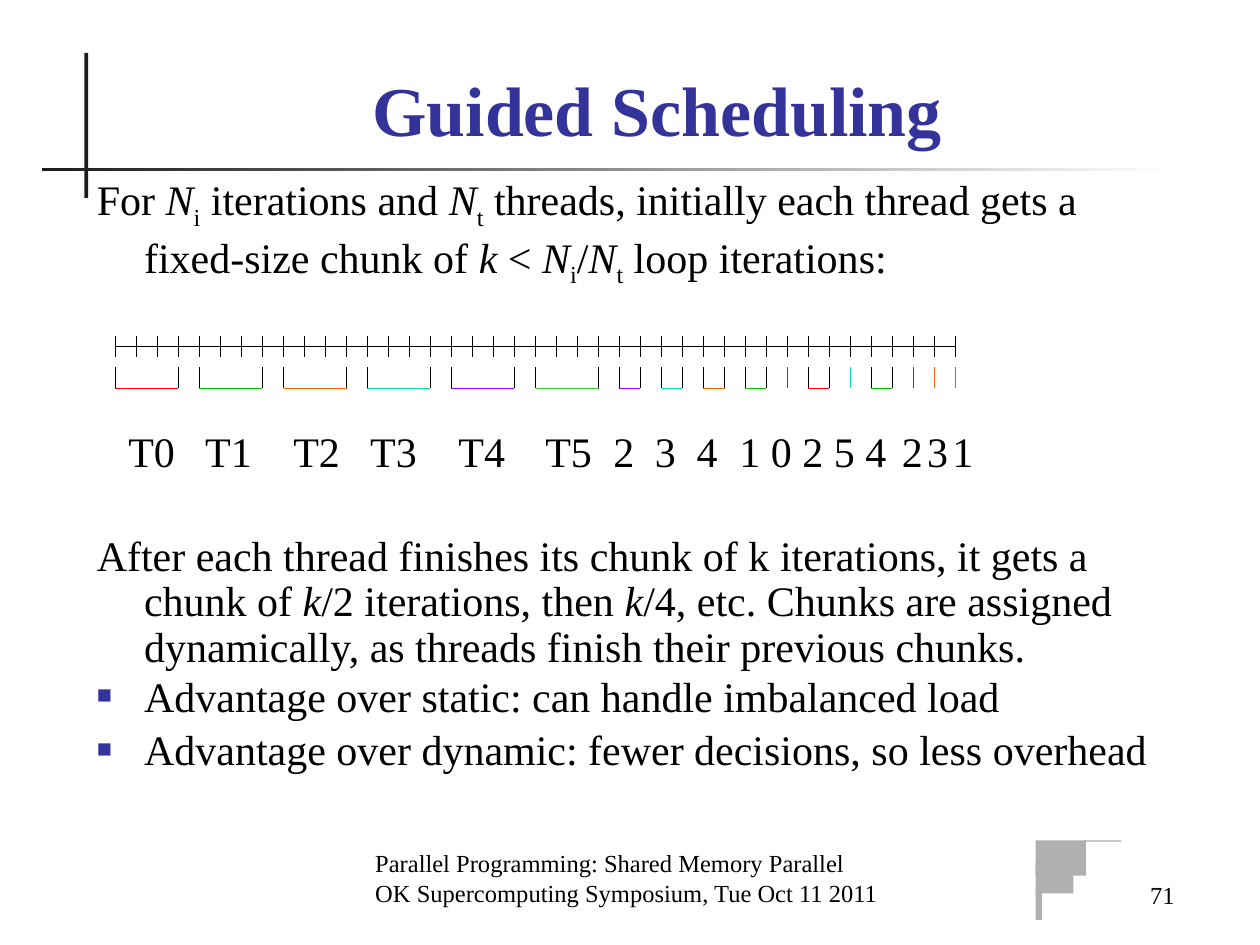
from pptx import Presentation
from pptx.dml.color import RGBColor
from pptx.enum.shapes import MSO_CONNECTOR as CONNECTOR, MSO_SHAPE as SHAPE
from pptx.enum.text import MSO_ANCHOR as ANCHOR, PP_ALIGN as ALIGN
from pptx.oxml.ns import qn
from pptx.util import Inches, Pt
from lxml.etree import SubElement

FONT = "Times New Roman"
COLORS = {
    "black": "000000", "ink": "1C1C1C", "white": "FFFFFF", "gray": "B0B0B0",
    "title": "333399", "red": "FF0000", "green": "00CC00", "lime": "33CC33",
    "orange": "FF6600", "teal": "00E4A8", "purple": "9900FF",
}

# Spans are plain strings or (text, style) pairs
N_I = [("N", "italic"), ("i", "sub")]
N_T = [("N", "italic"), ("t", "sub")]
INTRO = ["For ", *N_I, " iterations and ", *N_T,
         " threads, initially each thread gets a fixed-size chunk of ",
         ("k ", "italic"), "< ", *N_I, "/", *N_T, " loop iterations:"]
RULE = ["After each thread finishes its chunk of k iterations, it gets a chunk of ",
        ("k", "italic"), "/2 iterations, then ", ("k", "italic"),
        "/4, etc. Chunks are assigned dynamically, as threads finish their previous chunks."]
ADVANTAGES = [
    ("Advantage over static: can handle imbalanced load", 0.8),
    ("Advantage over dynamic: fewer decisions, so less overhead", 0.9),
]
FOOTER = ["Parallel Programming: Shared Memory Parallel",
          "OK Supercomputing Symposium, Tue Oct 11 2011"]

# Thread label, label tab stop, iterations in the chunk, colour
CHUNKS = [
    ("T0", 0.25, 4, "red"), ("T1", 0.86, 4, "green"), ("T2", 1.56, 4, "orange"),
    ("T3", 2.17, 4, "teal"), ("T4", 2.87, 4, "purple"), ("T5", 3.56, 4, "lime"),
    ("2", 4.1, 2, "purple"), ("3", 4.43, 2, "teal"), ("4", 4.76, 2, "orange"),
    ("1", 5.1, 2, "green"), ("0", 5.35, 1, "purple"), ("2", 5.6, 2, "red"),
    ("5", 5.85, 1, "teal"), ("4", 6.1, 2, "green"), ("2", 6.39, 1, "red"),
    ("3", 6.59, 1, "orange"), ("1", 6.79, 1, "green"),
]
# The timeline sits on a grid of twelfths of an inch
AXIS_LEFT, AXIS_Y, STEP = 11 / 12, 33 / 12, 2 / 12
TICK_TOP, TICK_BOTTOM = 32 / 12, 34 / 12
CHUNK_TOP, CHUNK_BOTTOM = 35 / 12, 37 / 12
HANG = 3 / 8

LOGO_BLOCKS = [(8.22, 6.67, 0.4, 0.28), (8.22, 6.84, 0.3, 0.25),
               (8.22, 7.05, 0.05, 0.25), (8.6, 6.67, 0.3, 0.01)]


def rgb(name):
    return RGBColor.from_string(COLORS[name])


def add_bar(page, at, color, fade_to=None):
    bar = page.shapes.add_shape(SHAPE.RECTANGLE, *map(Inches, at))
    bar.shadow.inherit = False
    bar.line.fill.background()
    if fade_to:
        bar.fill.gradient()
        bar.fill.gradient_angle = 0
        for stop, name in zip(bar.fill.gradient_stops, (color, fade_to)):
            stop.color.rgb = rgb(name)
    else:
        bar.fill.solid()
        bar.fill.fore_color.rgb = rgb(color)


def add_line(page, x1, y1, x2, y2, color="black"):
    line = page.shapes.add_connector(CONNECTOR.STRAIGHT, *map(Inches, (x1, y1, x2, y2)))
    line.line.color.rgb = rgb(color)
    line.line.width = Pt(0.75)
    SubElement(line._element.spPr, qn("a:effectLst"))


def add_box(page, at, anchor=ANCHOR.TOP):
    frame = page.shapes.add_textbox(*map(Inches, at)).text_frame
    frame.word_wrap = True
    frame.vertical_anchor = anchor
    return frame


def write(frame, spans, size=24, color="black", bold=False, align=ALIGN.LEFT,
          before=0, spacing=1.0, hang=0, bullet=None, tabs=()):
    """Write spans into the frame's first paragraph if unused, else a new one."""
    para = frame.paragraphs[0]
    if para.runs:
        para = frame.add_paragraph()
    para.alignment = align
    para.space_before = Pt(before)
    para.line_spacing = spacing
    props = para._p.get_or_add_pPr()
    if hang:
        props.set("marL", str(Inches(hang)))
        props.set("indent", str(-Inches(hang)))
    if bullet:
        tint = SubElement(props, qn("a:buClr"))
        SubElement(tint, qn("a:srgbClr"), val=COLORS["title"])
        SubElement(props, qn("a:buSzPct"), val="60000")
        SubElement(props, qn("a:buFont"), typeface=FONT)
        SubElement(props, qn("a:buChar"), char=bullet)
    if tabs:
        stops = SubElement(props, qn("a:tabLst"))
        for tab in tabs:
            SubElement(stops, qn("a:tab"), pos=str(Inches(tab)), algn="l")
    for item in spans:
        text, style = (item, None) if isinstance(item, str) else item
        span = para.add_run()
        span.text = text
        span.font.name = FONT
        span.font.size = Pt(size)
        span.font.bold = bold
        span.font.italic = style == "italic"
        span.font.color.rgb = rgb(color)
        if style == "sub":
            span._r.get_or_add_rPr().set("baseline", "-25000")


def add_timeline(page):
    count = sum(length for _, _, length, _ in CHUNKS)
    ticks = [AXIS_LEFT + i * STEP for i in range(count)]
    add_line(page, ticks[0], AXIS_Y, ticks[-1], AXIS_Y)
    for x in ticks:
        add_line(page, x, TICK_TOP, x, TICK_BOTTOM)
    first = 0
    for _, _, length, color in CHUNKS:
        left, right = ticks[first], ticks[first + length - 1]
        if length == 1:
            add_line(page, left, CHUNK_TOP, left, CHUNK_BOTTOM, color)
        else:
            add_line(page, left, CHUNK_BOTTOM, right, CHUNK_BOTTOM, color)
            for x in (left, right):
                add_line(page, x, CHUNK_TOP, x, CHUNK_BOTTOM)
        first += length


def main():
    deck = Presentation()
    deck.slide_width, deck.slide_height = Inches(10), Inches(7.5)
    page = deck.slides.add_slide(deck.slide_layouts[6])

    add_bar(page, (0.67, 0.42, 0.03, 1.15), "ink")
    add_bar(page, (0.33, 1.33, 9, 0.03), "ink", fade_to="white")
    for block in LOGO_BLOCKS:
        add_bar(page, block, "gray")

    footer = add_box(page, (2.88, 6.75, 4.37, 0.5), ANCHOR.BOTTOM)
    for line in FOOTER:
        write(footer, [line], size=14)
    number = add_box(page, (8, 6.77, 1.42, 0.5), ANCHOR.BOTTOM)
    write(number, ["71"], size=14, align=ALIGN.RIGHT)
    title = add_box(page, (0.83, 0.5, 8.77, 0.74), ANCHOR.BOTTOM)
    write(title, ["Guided Scheduling"], size=40, color="title", bold=True, align=ALIGN.CENTER)

    body = add_box(page, (0.67, 1.33, 8.67, 5.08))
    write(body, INTRO, hang=HANG)
    labels = "".join("\t" + label for label, *_ in CHUNKS)
    write(body, [labels], before=84, spacing=0.8, tabs=[tab for _, tab, *_ in CHUNKS])
    write(body, RULE, before=34, spacing=0.9, hang=HANG)
    for text, spacing in ADVANTAGES:
        write(body, [text], before=5, spacing=spacing, hang=HANG, bullet="■")

    add_timeline(page)
    deck.save("out.pptx")


if __name__ == "__main__":
    main()
